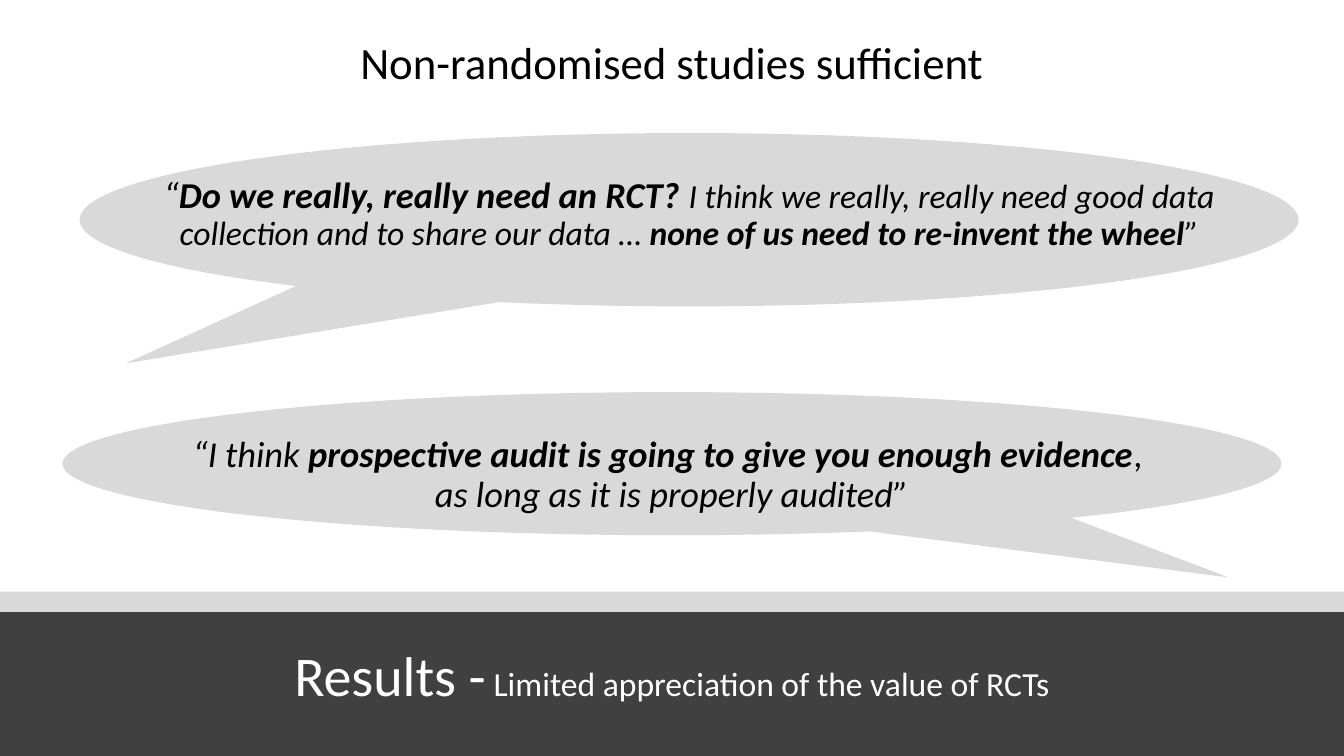
from dataclasses import dataclass

import pptx
import pptx.dml.color
import pptx.enum.shapes
import pptx.enum.text
import pptx.util

Inches = pptx.util.Inches
SHAPES = pptx.enum.shapes.MSO_SHAPE


@dataclass(frozen=True)
class Theme:
    font: str = "Calibri"
    ink: str = "000000"
    paper: str = "FFFFFF"
    bubble: str = "D9D9D9"
    footer: str = "404040"
    heading: int = 32
    section: int = 40
    quote: int = 26
    small: int = 24


THEME = Theme()


def rgb(value):
    return pptx.dml.color.RGBColor.from_string(value)


def add_block(s, kind, box, color):
    sp = s.shapes.add_shape(kind, *map(Inches, box))
    sp.shadow.inherit = False
    sp.fill.solid()
    sp.fill.fore_color.rgb = rgb(color)
    sp.line.fill.background()
    return sp


def add_text_box(s, box):
    tf = s.shapes.add_textbox(*map(Inches, box)).text_frame
    tf.word_wrap = True
    return tf


def style_paragraph(p, color, size=None):
    p.alignment = pptx.enum.text.PP_ALIGN.CENTER
    p.font.name = THEME.font
    p.font.color.rgb = rgb(color)
    if size:
        p.font.size = pptx.util.Pt(size)


def add_runs(p, runs):
    for text, size, bold in runs:
        r = p.add_run()
        r.text = text
        r.font.size = pptx.util.Pt(size)
        r.font.bold = bold


def add_heading(s, box, text):
    p = add_text_box(s, box).paragraphs[0]
    p.text = text
    style_paragraph(p, THEME.ink, THEME.heading)


def add_bubble(s, box, tail):
    sp = add_block(s, SHAPES.OVAL_CALLOUT, box, THEME.bubble)
    sp.adjustments[0], sp.adjustments[1] = tail


def add_quote(s, bubble, paragraphs, before=0, after=0):
    left, top, width, height = bubble
    inset = 0.67
    tf = add_text_box(s, (left + inset, top + 0.39, width - 2 * inset, 2.95))
    for i, runs in enumerate(paragraphs):
        p = tf.add_paragraph() if i else tf.paragraphs[0]
        style_paragraph(p, THEME.ink)
        p.font.italic = True
        p.line_spacing = 0.9
        p.space_before = pptx.util.Pt(before)
        p.space_after = pptx.util.Pt(after)
        add_runs(p, runs)


def add_footer(s, box, title, subtitle):
    left, top, width, height = box
    sp = add_block(s, SHAPES.RECTANGLE, box, THEME.footer)
    tf = sp.text_frame
    tf.vertical_anchor = pptx.enum.text.MSO_ANCHOR.MIDDLE
    p = tf.paragraphs[0]
    style_paragraph(p, THEME.paper)
    add_runs(p, [(title, THEME.section, False), (subtitle, THEME.small, False)])
    add_block(s, SHAPES.RECTANGLE, (left, top - 0.01, width, 0.2), THEME.bubble)


def build_results_slide(prs):
    s = prs.slides.add_slide(prs.slide_layouts[6])
    rct_bubble = (0.79, 1.32, 12.09, 1.72)
    audit_bubble = (0.62, 3.89, 12.09, 1.42)
    add_bubble(s, audit_bubble, (0.457, 0.795))
    add_bubble(s, rct_bubble, (-0.462, 0.828))
    add_footer(s, (0, 5.88, 13.33, 1.62), "Results -",
               " Limited appreciation of the value of RCTs")
    big, small = THEME.quote, THEME.small
    add_quote(s, audit_bubble, [
        [("“I think ", big, False),
         ("prospective audit is going to give you enough evidence", big, True),
         (", ", big, False)],
        [("as long as it is properly audited”", big, False)],
    ])
    add_quote(s, rct_bubble, [
        [("“", big, False),
         ("Do we really, really need an RCT? ", big, True),
         ("I think we really, really need good data collection "
          "and to share our data … ", small, False),
         ("none of us need to re-invent the wheel", small, True),
         ("”", small, False)],
    ], before=10, after=12)
    add_heading(s, (0, 0.3, 13.33, 0.64), "Non-randomised studies sufficient")


def main():
    prs = pptx.Presentation()
    prs.slide_width = Inches(13.33)
    prs.slide_height = Inches(7.5)
    build_results_slide(prs)
    prs.save("out.pptx")


if __name__ == "__main__":
    main()
